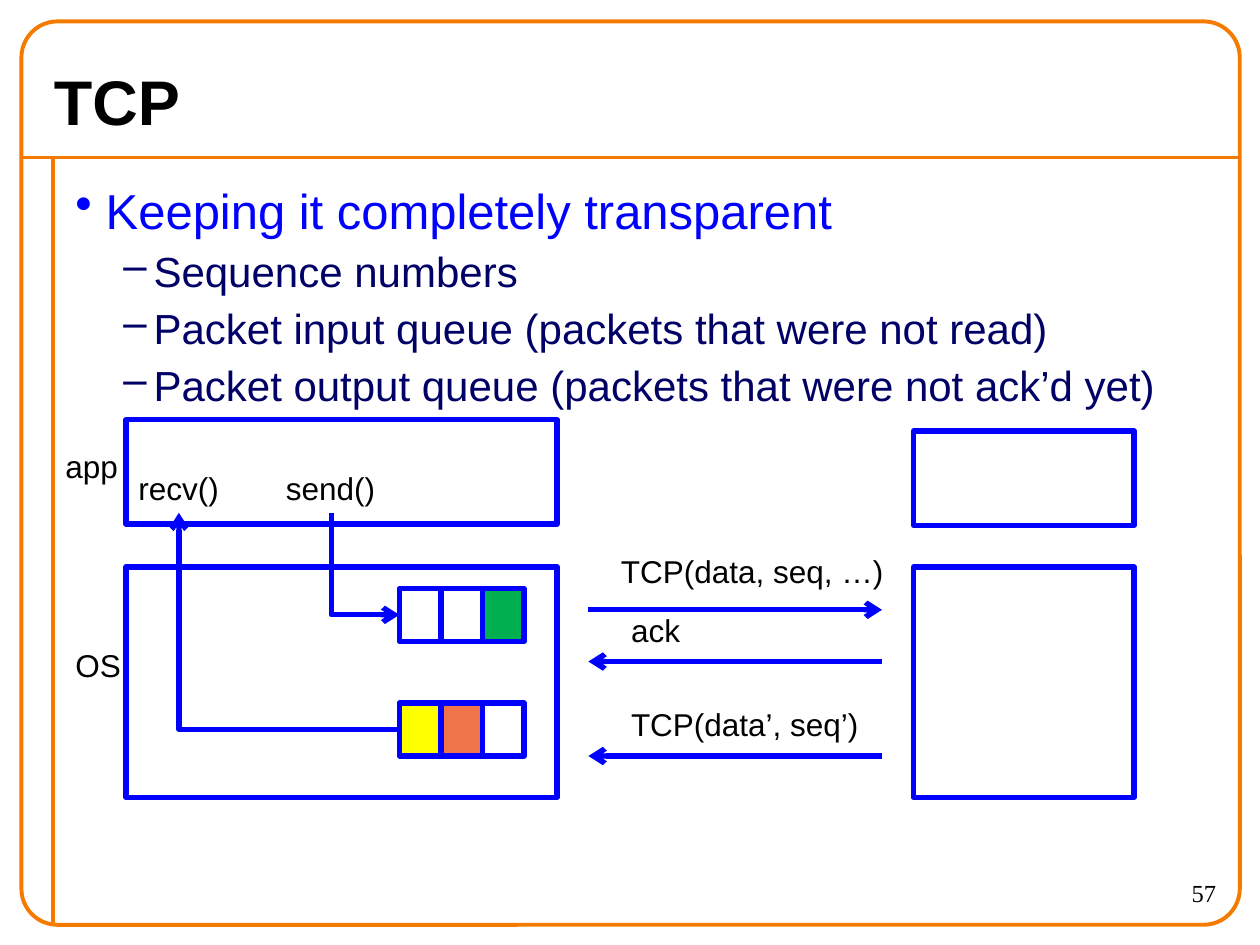
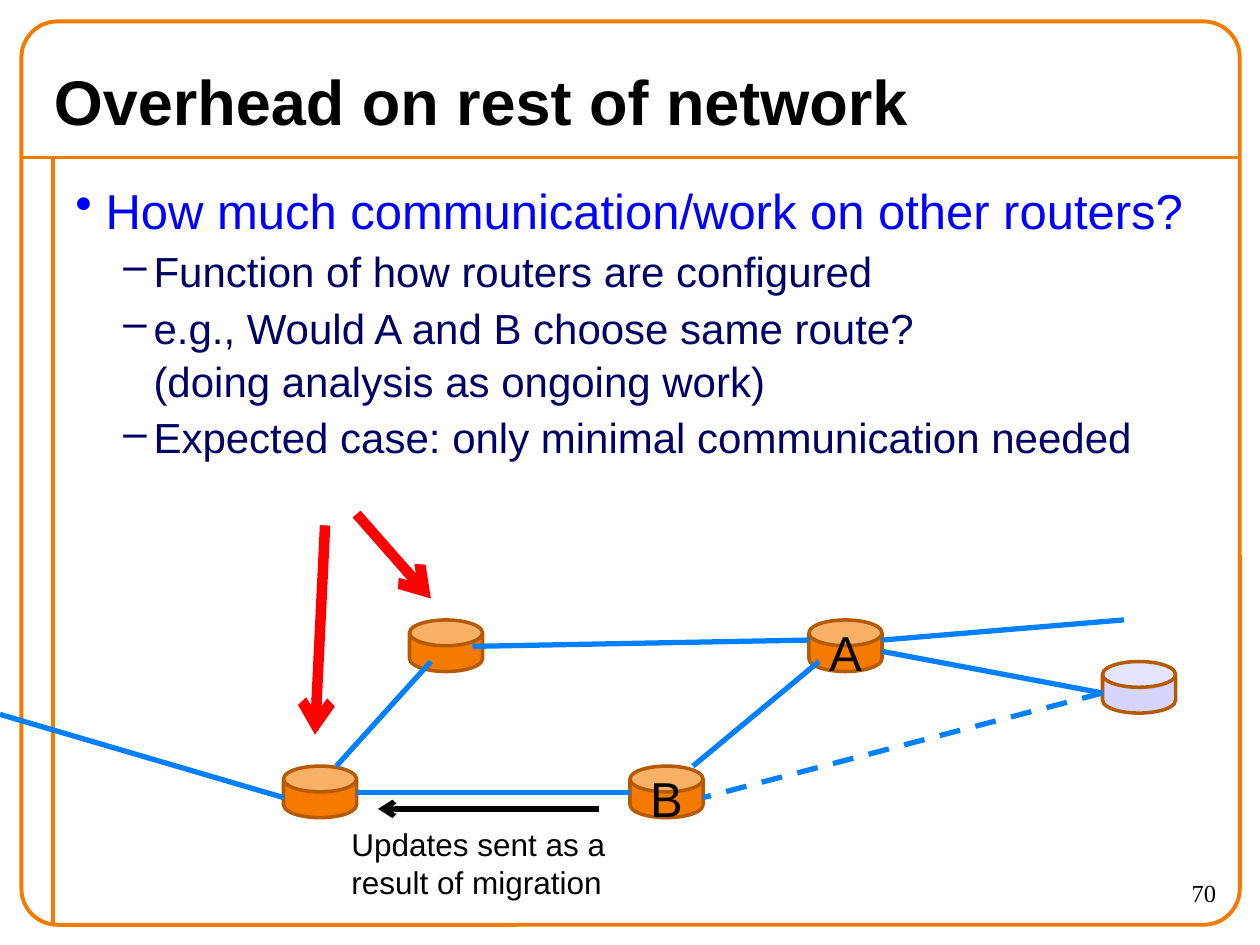
"""Build two networking slides: TCP transparency and migration overhead."""
from lxml.etree import SubElement
from pptx import Presentation
from pptx.dml.color import RGBColor
from pptx.enum.dml import MSO_LINE
from pptx.enum.shapes import MSO_CONNECTOR, MSO_SHAPE
from pptx.enum.text import MSO_ANCHOR, PP_ALIGN
from pptx.oxml.ns import qn
from pptx.util import Inches, Pt


class Theme:
    orange = RGBColor(0xF4, 0x7A, 0x00)
    rust = RGBColor(0xB5, 0x5A, 0x00)
    blue = RGBColor(0x00, 0x00, 0xFF)
    navy = RGBColor(0x00, 0x00, 0x66)
    sky = RGBColor(0x00, 0x80, 0xFF)
    lavender = RGBColor(0xD5, 0xD5, 0xFF)
    green = RGBColor(0x00, 0xB0, 0x50)
    yellow = RGBColor(0xFF, 0xFF, 0x00)
    coral = RGBColor(0xF0, 0x74, 0x49)
    red = RGBColor(0xFF, 0x00, 0x00)
    black = RGBColor(0x00, 0x00, 0x00)
    sans = "Arial"
    serif = "Times New Roman"
    title_size = Pt(36)
    point_size = Pt(28)
    detail_size = Pt(24)
    label_size = Pt(18)
    number_size = Pt(14)
    frame_width = Pt(2.25)
    can_width = Pt(2)
    diagram_width = Pt(3)
    pointer_width = Pt(6)


def write(frame, text, size, color=Theme.black, font=Theme.sans, bold=False, align=PP_ALIGN.LEFT):
    frame.text = text
    for paragraph in frame.paragraphs:
        paragraph.alignment = align
        for run in paragraph.runs:
            run.font.size = size
            run.font.name = font
            run.font.bold = bold
            run.font.color.rgb = color


def draw_line(slide, start, end, color, width=Theme.diagram_width, arrow=None, bend=False):
    kind = MSO_CONNECTOR.ELBOW if bend else MSO_CONNECTOR.STRAIGHT
    line = slide.shapes.add_connector(kind, *map(Inches, start + end))
    line.line.color.rgb = color
    line.line.width = width
    properties = line._element.spPr
    if bend:
        properties.find(qn("a:prstGeom")).set("prst", "bentConnector2")
    if arrow:
        SubElement(line.line._get_or_add_ln(), qn(f"a:{arrow}"), type="arrow")
    SubElement(properties, qn("a:effectLst"))
    return line


outlines = [
    ("TCP", "57", [
        (0, "Keeping it completely transparent"),
        (1, "Sequence numbers"),
        (1, "Packet input queue (packets that were not read)"),
        (1, "Packet output queue (packets that were not ack’d yet)"),
    ]),
    ("Overhead on rest of network", "70", [
        (0, "How much communication/work on other routers?"),
        (1, "Function of how routers are configured"),
        (1, "e.g., Would A and B choose same route?\v(doing analysis as ongoing work)"),
        (1, "Expected case: only minimal communication needed"),
    ]),
]
levels = [
    (0.24, "•", Theme.point_size, Theme.blue),
    (0.62, "–", Theme.detail_size, Theme.navy),
]

presentation = Presentation()
presentation.slide_width = Inches(10)
presentation.slide_height = Inches(7.5)

for heading, number, points in outlines:
    slide = presentation.slides.add_slide(presentation.slide_layouts[6])
    draw_line(slide, (0.17, 1.25), (9.83, 1.25), Theme.orange, Theme.frame_width)
    draw_line(slide, (0.42, 1.25), (0.42, 7.33), Theme.orange, Theme.frame_width)
    border = slide.shapes.add_shape(
        MSO_SHAPE.ROUNDED_RECTANGLE, Inches(0.17), Inches(0.17), Inches(9.67), Inches(7.17))
    border.adjustments[0] = 0.04
    border.shadow.inherit = False
    border.fill.background()
    border.line.color.rgb = Theme.orange
    border.line.width = Theme.frame_width

    title = slide.shapes.add_textbox(Inches(0.33), Inches(0.42), Inches(8.82), Inches(0.75)).text_frame
    title.word_wrap = True
    title.vertical_anchor = MSO_ANCHOR.MIDDLE
    write(title, heading, Theme.title_size, bold=True)

    body = slide.shapes.add_textbox(Inches(0.5), Inches(1.36), Inches(9.25), Inches(6)).text_frame
    body.word_wrap = True
    for index, (level, text) in enumerate(points):
        margin, bullet, size, color = levels[level]
        paragraph = body.add_paragraph() if index else body.paragraphs[0]
        paragraph.text = text
        paragraph.level = level
        paragraph.line_spacing = 1.05
        if index:
            paragraph.space_before = Pt(2.2)
        layout = paragraph._p.get_or_add_pPr()
        layout.set("marL", str(Inches(margin)))
        layout.set("indent", str(Inches(-0.24)))
        SubElement(layout, qn("a:buChar"), char=bullet)
        for run in paragraph.runs:
            run.font.size = size
            run.font.name = Theme.sans
            run.font.color.rgb = color

    page = slide.shapes.add_textbox(Inches(8.75), Inches(6.92), Inches(1), Inches(0.42)).text_frame
    page.word_wrap = True
    write(page, number, Theme.number_size, font=Theme.serif, align=PP_ALIGN.RIGHT)

tcp, overhead = presentation.slides

hosts = [
    (1, 4.5, 3.42, 1.83, None),
    (7.25, 4.5, 1.75, 1.83, None),
    (1, 3.33, 3.42, 0.83, None),
    (7.25, 3.42, 1.75, 0.75, None),
]
queues = [
    (4.67, (None, None, Theme.green)),
    (5.58, (Theme.yellow, Theme.coral, None)),
]
packets = [
    (3.17 + 0.33 * column, top, 0.33, 0.42, color)
    for top, colors in queues for column, color in enumerate(colors)
]
boxes = []
for left, top, width, height, color in hosts + packets:
    box = tcp.shapes.add_shape(MSO_SHAPE.RECTANGLE, *map(Inches, (left, top, width, height)))
    box.shadow.inherit = False
    if color:
        box.fill.solid()
        box.fill.fore_color.rgb = color
    else:
        box.fill.background()
    box.line.color.rgb = Theme.blue
    box.line.width = Theme.diagram_width
    boxes.append(box)
output_queue, input_queue = boxes[4], boxes[7]

for y, arrow in [(4.84, "tailEnd"), (5.25, "headEnd"), (6, "headEnd")]:
    draw_line(tcp, (4.67, y), (7, y), Theme.blue, arrow=arrow)
receive_path = draw_line(tcp, (3.17, 5.79), (1.42, 4.07), Theme.blue, arrow="tailEnd", bend=True)
receive_path.begin_connect(input_queue, 1)
send_path = draw_line(tcp, (3.17, 4.88), (2.63, 4.07), Theme.blue, arrow="headEnd", bend=True)
send_path.begin_connect(output_queue, 1)

labels = [
    (tcp, 4.83, 4.33, 2.31, 0.4, "TCP(data, seq, …)"),
    (tcp, 2.17, 3.67, 0.92, 0.4, "send()"),
    (tcp, 4.91, 4.8, 0.59, 0.4, "ack"),
    (tcp, 4.91, 5.55, 2.02, 0.4, "TCP(data’, seq’)"),
    (tcp, 1, 3.67, 0.85, 0.4, "recv()"),
    (tcp, 0.42, 3.5, 0.62, 0.4, "app"),
    (tcp, 0.5, 5.08, 0.57, 0.4, "OS"),
    (overhead, 2.69, 6.5, 2.31, 0.71, "Updates sent as a\nresult of migration"),
]
for slide, left, top, width, height, text in labels:
    label = slide.shapes.add_textbox(*map(Inches, (left, top, width, height))).text_frame
    label.word_wrap = False
    write(label, text, Theme.label_size)

routers = [
    (2.25, 6.08, Theme.orange, ""),
    (3.25, 4.92, Theme.orange, ""),
    (5, 6.08, Theme.orange, "B"),
    (6.42, 4.92, Theme.orange, "A"),
    (8.75, 5.25, Theme.lavender, ""),
]
for left, top, color, name in routers:
    router = overhead.shapes.add_shape(
        MSO_SHAPE.CAN, Inches(left), Inches(top), Inches(0.58), Inches(0.41))
    router.adjustments[0] = 0.59
    router.shadow.inherit = False
    router.fill.solid()
    router.fill.fore_color.rgb = color
    router.line.color.rgb = Theme.rust
    router.line.width = Theme.can_width
    if name:
        router.text_frame.vertical_anchor = MSO_ANCHOR.MIDDLE
        write(router.text_frame, name, Theme.point_size, align=PP_ALIGN.CENTER)

links = [
    ((6.5, 5.25), (5.5, 6.08)),
    ((6.42, 5.08), (3.75, 5.13)),
    ((3.42, 5.25), (2.67, 6.08)),
    ((2.83, 6.29), (5, 6.29)),
    ((2.25, 6.33), (0, 5.67)),
    ((8.75, 5.5), (7, 5.17)),
    ((8.92, 4.92), (7, 5.08)),
]
for start, end in links:
    draw_line(overhead, start, end, Theme.sky)
new_link = draw_line(overhead, (8.75, 5.5), (5.58, 6.33), Theme.sky)
new_link.line.dash_style = MSO_LINE.DASH

for start, end in [((2.58, 4.17), (2.5, 5.83)), ((2.83, 4.08), (3.42, 4.75))]:
    draw_line(overhead, start, end, Theme.red, Theme.pointer_width, "tailEnd")
draw_line(overhead, (4.75, 6.42), (3, 6.42), Theme.black, arrow="tailEnd")

presentation.save("out.pptx")
